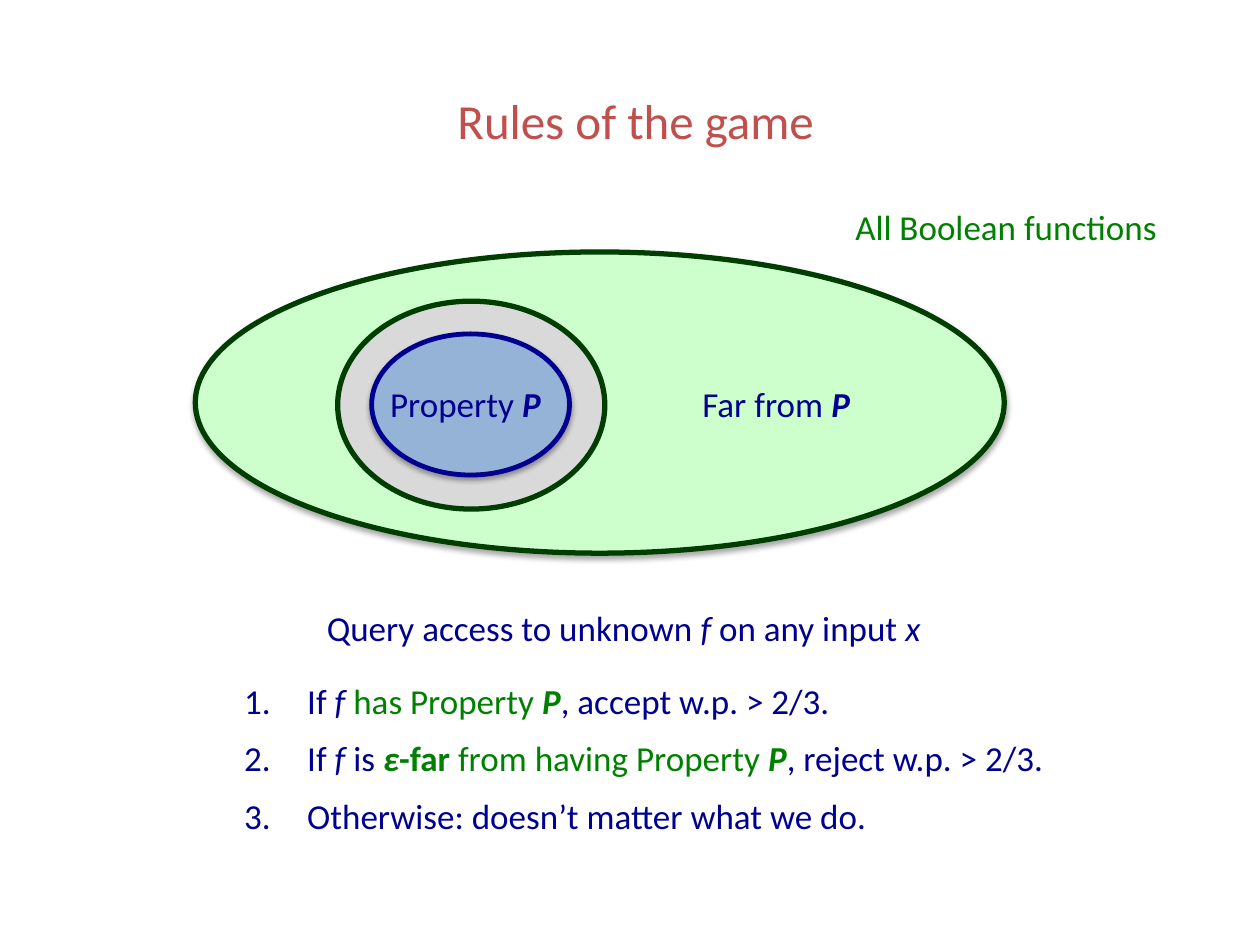
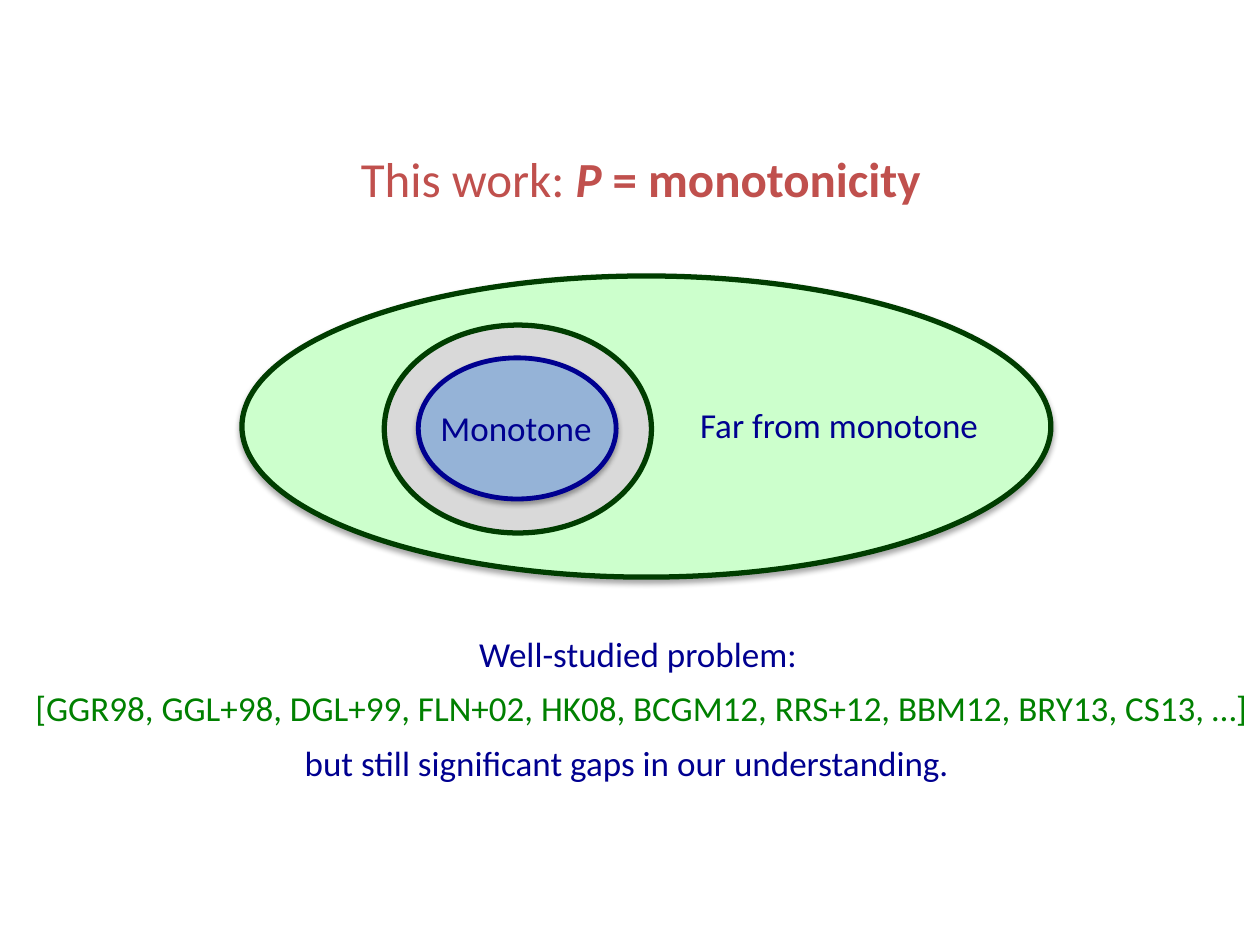
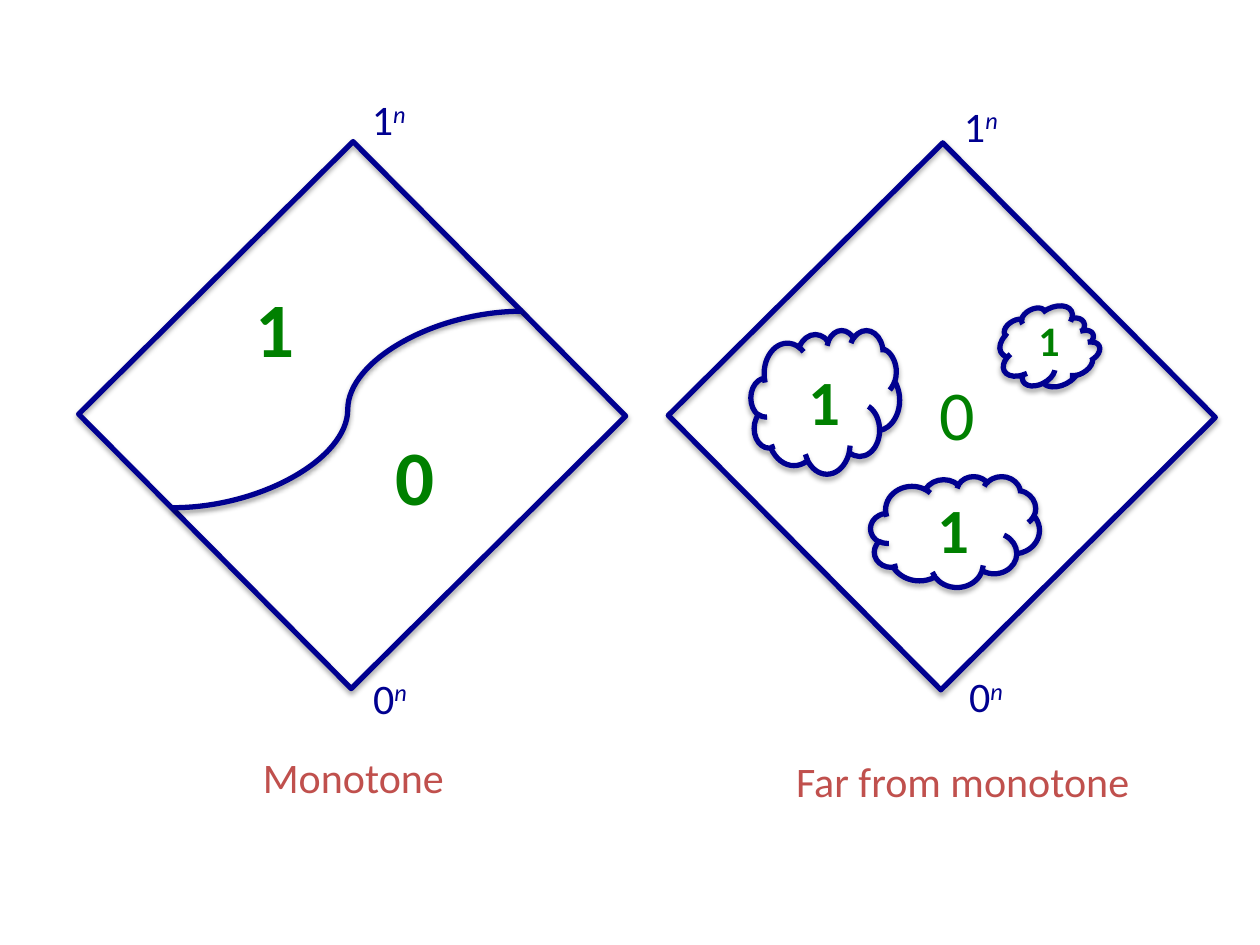
from lxml import etree
from pptx import Presentation
from pptx.dml.color import RGBColor
from pptx.enum.shapes import MSO_CONNECTOR, MSO_SHAPE
from pptx.enum.text import MSO_ANCHOR, MSO_AUTO_SIZE, PP_ALIGN
from pptx.oxml import parse_xml
from pptx.oxml.ns import nsdecls, qn
from pptx.util import Inches, Pt

NAVY = RGBColor(0x00, 0x00, 0x90)
GREEN = RGBColor(0x00, 0x80, 0x00)
DARK_GREEN = RGBColor(0x00, 0x3D, 0x00)
PALE_GREEN = RGBColor(0xCC, 0xFF, 0xCC)
GREY = RGBColor(0xD9, 0xD9, 0xD9)
LIGHT_BLUE = RGBColor(0x95, 0xB3, 0xD7)
RED = RGBColor(0xC0, 0x50, 0x4D)

FONT = "Calibri"
TITLE_ONLY = 5
ITALIC = {"italic": True}
BOLD = {"bold": True}
BOLD_ITALIC = BOLD | ITALIC
IN_GREEN = {"color": GREEN}
MIDDLE = {"vertical_anchor": MSO_ANCHOR.MIDDLE}
LABEL = {"line_spacing": Pt(22.8), "space_after": Pt(9)}


def inches(box):
    return [Inches(round(v, 2)) for v in box]


def write(tf, paras, size=20, color=NAVY, frame=None, para=None):
    """Fill a text frame; a paragraph is a list of runs, each a string or (string, formats)."""
    frame_format = {"word_wrap": True, "auto_size": MSO_AUTO_SIZE.NONE} | (frame or {})
    for name, value in frame_format.items():
        setattr(tf, name, value)
    for i, runs in enumerate(paras):
        p = tf.add_paragraph() if i else tf.paragraphs[0]
        for name, value in ({"alignment": PP_ALIGN.CENTER} | (para or {})).items():
            setattr(p, name, value)
        for run in runs:
            words, formats = (run, {}) if isinstance(run, str) else run
            formats = {"name": FONT, "size": Pt(size), "color": color} | formats
            r = p.add_run()
            r.text = words
            r.font.color.rgb = formats.pop("color")
            baseline = formats.pop("baseline", None)
            for name, value in formats.items():
                setattr(r.font, name, value)
            if baseline:
                r._r.get_or_add_rPr().set("baseline", str(baseline * 1000))


def add_text(s, box, paras, **formats):
    tf = s.shapes.add_textbox(*inches(box)).text_frame
    write(tf, paras, **formats)
    return tf


def add_title(s, box, runs, size=28):
    title = s.shapes.title
    title.left, title.top, title.width, title.height = inches(box)
    write(title.text_frame, [runs], size=size, color=RED, frame=MIDDLE)


def add_shadow(shape, alpha=35, dist=1.8):
    spPr = shape._element.spPr
    for old in spPr.findall(qn("a:effectLst")):
        spPr.remove(old)
    spPr.append(parse_xml(
        f'<a:effectLst {nsdecls("a")}><a:outerShdw blurRad="{Pt(3.1)}" dist="{Pt(dist)}" '
        f'dir="5400000" rotWithShape="0"><a:srgbClr val="000000">'
        f'<a:alpha val="{alpha * 1000}"/></a:srgbClr></a:outerShdw></a:effectLst>'))


def add_outline(s, kind, box, line=NAVY, width=3, fill=None, shadow=True, rotation=0):
    sp = s.shapes.add_shape(kind, *inches(box))
    sp.shadow.inherit = False
    sp.rotation = rotation
    if fill is None:
        sp.fill.background()
    else:
        sp.fill.solid()
        sp.fill.fore_color.rgb = fill
    sp.line.color.rgb = line
    sp.line.width = Pt(width)
    if shadow:
        add_shadow(sp)


def number_paragraphs(tf):
    for p in tf.paragraphs:
        pPr = p._p.get_or_add_pPr()
        pPr.set("marL", str(Inches(0.5)))
        pPr.set("indent", str(-Inches(0.5)))
        color = etree.SubElement(pPr, qn("a:buClr"))
        etree.SubElement(color, qn("a:srgbClr")).set("val", str(NAVY))
        etree.SubElement(pPr, qn("a:buAutoNum")).set("type", "arabicPeriod")


def add_property_diagram(s, left, top, inside, outside, outside_box):
    """Nested ellipses: all functions, those near the property, those having it."""
    oval = MSO_SHAPE.OVAL
    add_outline(s, oval, (left, top, 6.42, 2.39), DARK_GREEN, fill=PALE_GREEN)
    add_outline(s, oval, (left + 1.13, top + 0.39, 2.12, 1.65), DARK_GREEN,
                fill=GREY, shadow=False)
    add_outline(s, oval, (left + 1.4, top + 0.65, 1.57, 1.12), width=2.75, fill=LIGHT_BLUE)
    add_text(s, (left + 1.15, top + 1, 2.05, 0.43), [inside], para=LABEL)
    dx, dy, width = outside_box
    add_text(s, (left + dx, top + dy, width, 0.43), [outside], para=LABEL)


def add_cube(s, left, top, top_label, bottom_label):
    """Diamond with its extreme points labelled at the given offsets."""
    add_outline(s, MSO_SHAPE.RECTANGLE, (left, top, 3.07, 3.07), rotation=45.2)
    for digit, (dx, dy) in (("1", top_label), ("0", bottom_label)):
        add_text(s, (left + dx, top + dy, 1.03, 0.83),
                 [[digit, ("n", ITALIC | {"baseline": 30})]], size=24, frame=MIDDLE)


def add_value(s, left, top, digit, size, width=0.57, height=0.83, bold=True):
    add_text(s, (left, top, width, height), [[(digit, {"bold": bold})]],
             size=size, color=GREEN, frame=MIDDLE)


def build_rules(s):
    add_title(s, (1.11, 0.54, 7.87, 0.83), ["Rules of the game"])
    add_property_diagram(s, 1.55, 2, ["Property ", ("P ", BOLD_ITALIC)],
                         ["Far from ", ("P", BOLD_ITALIC)], (3.56, 1, 2.1))
    add_text(s, (6.27, 1.6, 3.43, 0.43), [["All Boolean functions"]], color=GREEN, para=LABEL)
    add_text(s, (0.28, 4.64, 9.34, 0.68),
             [["Query access to unknown ", ("f", ITALIC), " on any input ", ("x", ITALIC)]],
             frame=MIDDLE, para={"space_after": Pt(3)})
    green_p = ("P", BOLD_ITALIC | IN_GREEN)
    rules = [
        ["If ", ("f ", ITALIC), ("has Property ", IN_GREEN), green_p, ", accept w.p. > 2/3."],
        ["If ", ("f", ITALIC), " is ", ("ε", BOLD_ITALIC | IN_GREEN), ("-far ", BOLD | IN_GREEN),
         ("from having Property ", IN_GREEN), green_p, ", reject w.p. > 2/3."],
        ["Otherwise: doesn’t matter what we do."],
    ]
    number_paragraphs(add_text(s, (1.84, 5.34, 6.64, 1.36), rules,
                               para={"alignment": PP_ALIGN.LEFT, "space_after": Pt(9)}))


def build_monotonicity(s):
    add_title(s, (1.15, 1, 7.87, 0.83),
              ["This work: ", ("P", BOLD_ITALIC), (" = monotonicity", BOLD)])
    add_property_diagram(s, 1.92, 2.19, ["Monotone"], ["Far from monotone"], (3.42, 0.98, 2.64))
    spaced = {"line_spacing": Pt(30.8)}
    citations = ("[GGR98, GGL+98, DGL+99, FLN+02, HK08, BCGM12, RRS+12, BBM12, "
                 "BRY13, CS13, …]")
    add_text(s, (0.17, 4.88, 9.85, 0.95),
             [["Well-studied problem: "], [(citations, IN_GREEN)]], para=spaced)
    add_text(s, (0.05, 5.74, 9.85, 0.53),
             [["but still significant gaps in our understanding."]], para=spaced)


def build_monotone_cube(s, left, top):
    add_cube(s, left, top, (1.31, -1.23), (1.32, 3.36))
    curve = s.shapes.add_connector(
        MSO_CONNECTOR.CURVE, *inches((left + 2.89, top + 0.71, left + 0.11, top + 2.27)))
    curve.line.color.rgb = NAVY
    curve.line.width = Pt(3)
    add_shadow(curve, alpha=38, dist=1.6)
    add_value(s, left + 0.64, top + 0.42, "1", 44)
    add_value(s, left + 1.75, top + 1.59, "0", 44)


def build_far_cube(s, left, top):
    add_cube(s, left, top, (1.33, -1.19), (1.37, 3.34))
    clouds = [  # cloud box, rotation, digit position, digit size
        ((0.02, 0.85, 1.18, 1.14), 0, (0.32, 0.99), 36),
        ((0.97, 2.01, 1.34, 0.88), 0, (1.34, 2.01), 36),
        ((2.04, 0.61, 0.65, 0.76), 62.4, (2.1, 0.51), 24),
    ]
    for (dx, dy, width, height), rotation, (digit_dx, digit_dy), size in clouds:
        add_outline(s, MSO_SHAPE.CLOUD, (left + dx, top + dy, width, height), rotation=rotation)
        add_value(s, left + digit_dx, top + digit_dy, "1", size)
    add_value(s, left + 1.42, top + 1.25, "0", 40, 0.4, 0.51, bold=False)


def build_comparison(s):
    add_title(s, (1.21, 5.75, 3.19, 0.83), ["Monotone"], size=24)
    add_text(s, (5.45, 5.78, 4.38, 0.83), [["Far from monotone"]],
             size=24, color=RED, frame=MIDDLE)
    build_monotone_cube(s, 1.26, 1.76)
    build_far_cube(s, 5.94, 1.77)


def main():
    prs = Presentation()
    prs.slide_width, prs.slide_height = Inches(10), Inches(7.5)
    for build in (build_rules, build_monotonicity, build_comparison):
        build(prs.slides.add_slide(prs.slide_layouts[TITLE_ONLY]))
    prs.save("out.pptx")


if __name__ == "__main__":
    main()
